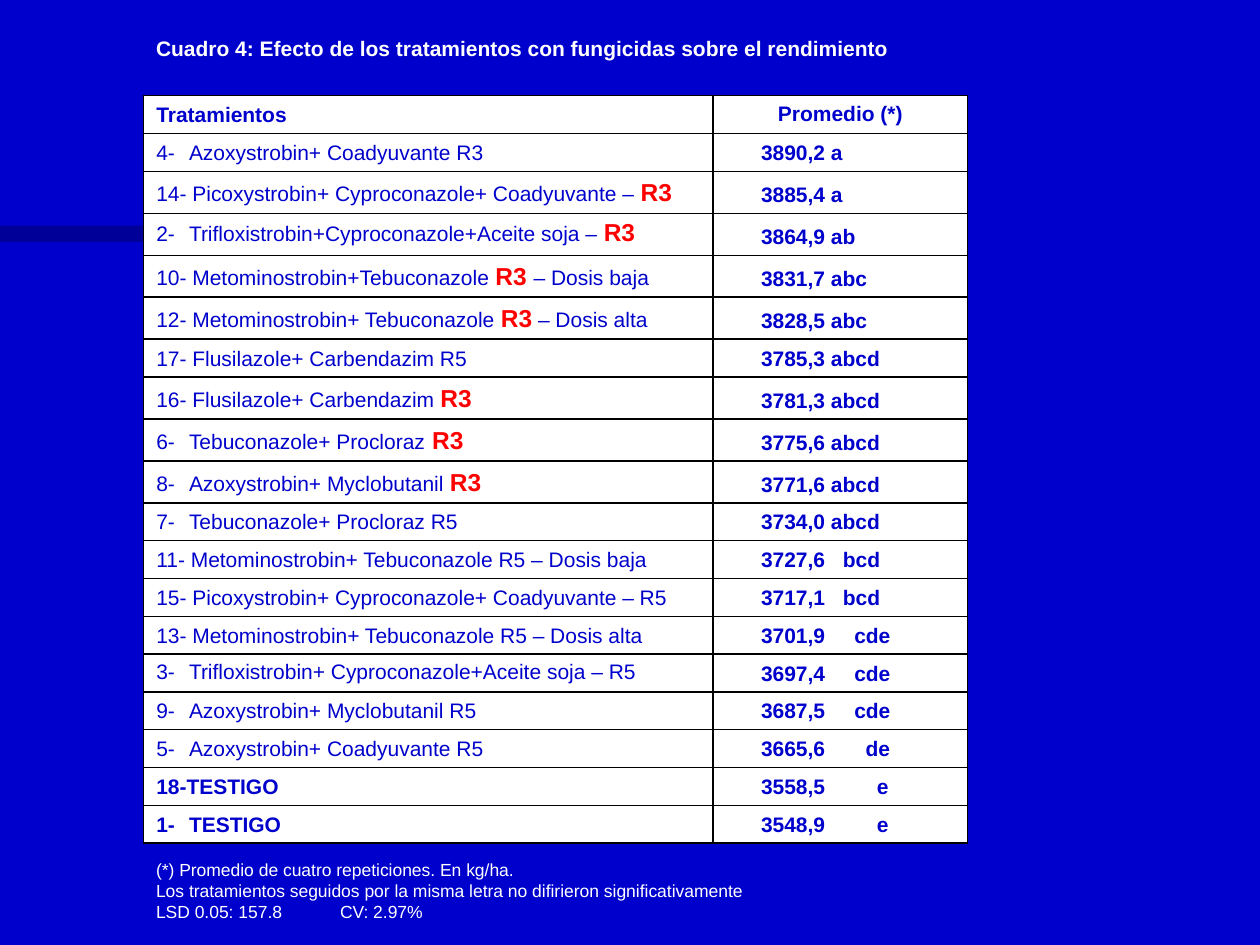
from lxml import etree
from pptx import Presentation, util as u
from pptx.dml.color import RGBColor
from pptx.enum import shapes, text
from pptx.oxml import ns

BLUE, WHITE, RED, BLACK, NAVY = "0000CC", "FFFFFF", "FF0000", "000000", "000066"
LEFT = 1.14
ROWS = [
    ("4-\tAzoxystrobin+ Coadyuvante R3", "3890,2", "a"),
    ("14- Picoxystrobin+ Cyproconazole+ Coadyuvante – |R3", "3885,4", "a"),
    ("2-\tTrifloxistrobin+Cyproconazole+Aceite soja – |R3", "3864,9", "ab"),
    ("10- Metominostrobin+Tebuconazole |R3 |– Dosis baja", "3831,7", "abc"),
    ("12- Metominostrobin+ Tebuconazole |R3| – Dosis alta", "3828,5", "abc"),
    ("17- Flusilazole+ Carbendazim R5", "3785,3", "abcd"),
    ("16- Flusilazole+ Carbendazim |R3", "3781,3", "abcd"),
    ("6-\tTebuconazole+ Procloraz| R3", "3775,6", "abcd"),
    ("8-\tAzoxystrobin+ Myclobutanil |R3", "3771,6", "abcd"),
    ("7-\tTebuconazole+ Procloraz R5", "3734,0", "abcd"),
    ("11- Metominostrobin+ Tebuconazole R5 – Dosis baja", "3727,6", "bcd"),
    ("15- Picoxystrobin+ Cyproconazole+ Coadyuvante – R5", "3717,1", "bcd"),
    ("13- Metominostrobin+ Tebuconazole R5 – Dosis alta", "3701,9", "cde"),
    ("3-\tTrifloxistrobin+ Cyproconazole+Aceite soja – R5", "3697,4", "cde"),
    ("9-\tAzoxystrobin+ Myclobutanil R5", "3687,5", "cde"),
    ("5-\tAzoxystrobin+ Coadyuvante R5", "3665,6", "de"),
    ("18-TESTIGO", "3558,5", "e"),
    ("1-\tTESTIGO", "3548,9", "e"),
]
NOTES = [
    "(*) Promedio de cuatro repeticiones. En kg/ha.",
    "Los tratamientos seguidos por la misma letra no difirieron significativamente",
    "LSD 0.05: 157.8\tCV: 2.97%",
]


def paint(fill, color):
    """Fill with a solid hex colour."""
    fill.solid()
    fill.fore_color.rgb = RGBColor.from_string(color)


def add_sub(parent, tag, **attrs):
    """Append a DrawingML element and return it."""
    return etree.SubElement(parent, ns.qn(tag), attrs)


def style(font, size, color, bold):
    """Set the face, size, colour and weight of a font."""
    font.name, font.size, font.bold = "Arial", u.Pt(size), bold
    font.color.rgb = RGBColor.from_string(color)


def write(para, words, size, color, bold=False, stop=None):
    """Write a paragraph, with red text between bars and one tab stop."""
    if stop:
        tabs = add_sub(para._p.get_or_add_pPr(), "a:tabLst")
        add_sub(tabs, "a:tab", pos=str(int(u.Inches(stop))), algn="l")
    style(para.font, size, color, bold)
    for i, part in enumerate(words.split("|")):
        run = para.add_run()
        run.text = part
        if i % 2:
            style(run.font, 14, RED, True)


def add_bar(slide):
    """Add the half-transparent bar at the left edge."""
    bar = slide.shapes.add_shape(
        shapes.MSO_SHAPE.RECTANGLE, 0, u.Inches(1.79), u.Inches(3.66), u.Inches(0.13))
    bar.shadow.inherit = False
    bar.line.fill.background()
    paint(bar.fill, NAVY)
    tint = bar._element.spPr.find(".//" + ns.qn("a:srgbClr"))
    add_sub(tint, "a:alpha", val="50000")


def add_text(slide, top, width, height, lines, size, bold=False):
    """Add a blue box of white lines."""
    box = slide.shapes.add_textbox(*map(u.Inches, (LEFT, top, width, height)))
    paint(box.fill, BLUE)
    frame = box.text_frame
    frame.word_wrap = False
    frame.auto_size = text.MSO_AUTO_SIZE.SHAPE_TO_FIT_TEXT
    for i, line in enumerate(lines):
        para = frame.add_paragraph() if i else frame.paragraphs[0]
        write(para, line, size, WHITE, bold, 1.46 if "\t" in line else None)


def fill_cell(cell, words, bold, stop=None, top=False):
    """Write a white cell with black borders."""
    props = cell._tc.get_or_add_tcPr()
    for side in ("a:lnL", "a:lnR", "a:lnT", "a:lnB"):
        line = add_sub(props, side, w=str(int(u.Pt(1))))
        add_sub(add_sub(line, "a:solidFill"), "a:srgbClr", val=BLACK)
    paint(cell.fill, WHITE)
    anchor = text.MSO_ANCHOR
    cell.vertical_anchor = anchor.TOP if top else anchor.BOTTOM
    write(cell.text_frame.paragraphs[0], words, 12, BLUE, bold, stop)


def add_grid(slide):
    """Add the table of treatments and yields."""
    table = slide.shapes.add_table(
        len(ROWS) + 1, 2, *map(u.Inches, (LEFT, 0.76, 6.54, 5.93))).table
    for col, width in zip(table.columns, (4.52, 2.02)):
        col.width = u.Inches(width)
    table.rows[0].height = u.Inches(0.3)
    fill_cell(table.cell(0, 0), "Tratamientos", True)
    head = table.cell(0, 1)
    fill_cell(head, "Promedio (*)", True, top=True)
    head.text_frame.paragraphs[0].alignment = text.PP_ALIGN.CENTER
    for i, (name, mean, group) in enumerate(ROWS, 1):
        table.rows[i].height = u.Inches(1 / 3 if "|" in name else 0.3)
        fill_cell(table.cell(i, 0), name, "TESTIGO" in name,
                  0.26 if "\t" in name else None, "Trifloxistrobin" in name)
        cell = table.cell(i, 1)
        cell.margin_left = u.Inches(0.38)
        step = "abcde".index(group[0])
        gap, stop = ("\t", 0.56 + 0.09 * step) if step else (" ", None)
        fill_cell(cell, mean + gap + group, True, stop)


def main():
    """Build and save the slide."""
    deck = Presentation()
    deck.slide_width, deck.slide_height = u.Inches(10), u.Inches(7.5)
    slide = deck.slides.add_slide(deck.slide_layouts[6])
    paint(slide.background.fill, BLUE)
    add_bar(slide)
    add_grid(slide)
    add_text(slide, 6.77, 4.85, 0.6, NOTES, 10)
    title = "Cuadro 4: Efecto de los tratamientos con fungicidas sobre el rendimiento"
    add_text(slide, 0.23, 6.02, 0.3, [title], 12, True)
    deck.save("out.pptx")


if __name__ == "__main__":
    main()
